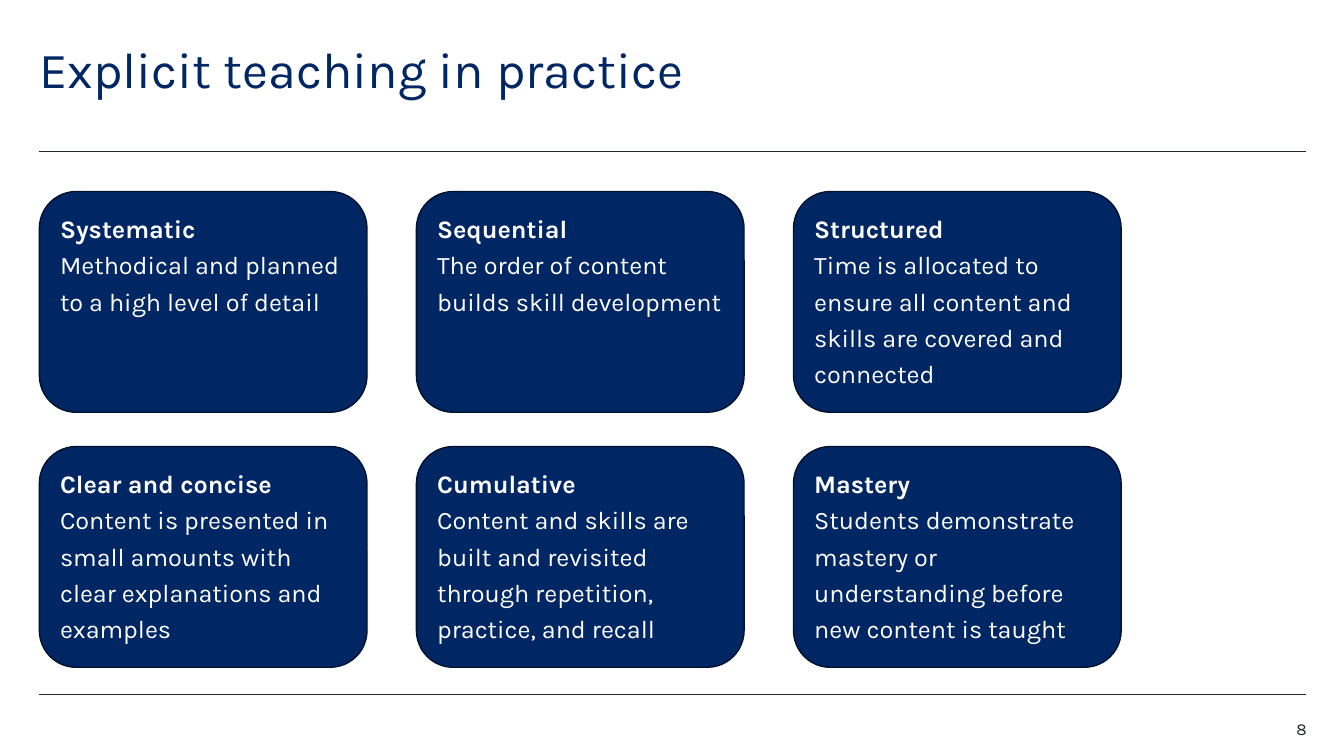
import pptx
import pptx.util
import pptx.dml.color
import pptx.enum.shapes
import pptx.enum.text
from lxml import etree
from pptx.util import Inches

NAVY = pptx.dml.color.RGBColor(0x00, 0x26, 0x64)
DARK_NAVY = pptx.dml.color.RGBColor(0x00, 0x11, 0x2C)
CHARCOAL = pptx.dml.color.RGBColor(0x22, 0x27, 0x2B)
WHITE = pptx.dml.color.RGBColor(0xFF, 0xFF, 0xFF)

MARGIN = 0.39
RULE_END = 12.95
CARD_TOP = 1.9
CARD_WIDTH, CARD_HEIGHT = 3.25, 2.19
COLUMN_STEP, ROW_STEP = 3.74, 2.53
COLUMNS = 3

PRINCIPLES = [
    ("Systematic", "Methodical and planned to a high level of detail"),
    ("Sequential", "The order of content builds skill development"),
    ("Structured", "Time is allocated to ensure all content and skills are covered and connected"),
    ("Clear and concise", "Content is presented in small amounts with clear explanations and examples"),
    ("Cumulative", "Content and skills are built and revisited through repetition, practice, and recall"),
    ("Mastery", "Students demonstrate mastery or understanding before new content is taught"),
]


class SlideBuilder:
    font_name = "Karla"

    def __init__(self, slide):
        self.slide = slide

    def style(self, paragraph, size, color, bold=False):
        paragraph.font.name = self.font_name
        paragraph.font.size = pptx.util.Pt(size)
        paragraph.font.color.rgb = color
        paragraph.font.bold = bold

    def rule(self, y):
        rule = self.slide.shapes.add_connector(
            pptx.enum.shapes.MSO_CONNECTOR.STRAIGHT,
            Inches(MARGIN), Inches(y), Inches(RULE_END), Inches(y))
        rule.line.color.rgb = CHARCOAL
        rule.line.width = pptx.util.Pt(0.5)
        etree.SubElement(rule._element.spPr, pptx.oxml.ns.qn("a:effectLst"))

    def text(self, content, left, top, width, height, size, color,
             align=pptx.enum.text.PP_ALIGN.LEFT,
             anchor=pptx.enum.text.MSO_ANCHOR.TOP, line_spacing=1.0):
        box = self.slide.shapes.add_textbox(
            Inches(left), Inches(top), Inches(width), Inches(height))
        frame = box.text_frame
        frame.word_wrap = True
        frame.margin_left = frame.margin_right = 0
        frame.margin_top = frame.margin_bottom = 0
        frame.vertical_anchor = anchor
        paragraph = frame.paragraphs[0]
        paragraph.text = content
        paragraph.alignment = align
        paragraph.line_spacing = line_spacing
        self.style(paragraph, size, color)

    def card(self, heading, description, left, top):
        card = self.slide.shapes.add_shape(
            pptx.enum.shapes.MSO_SHAPE.ROUNDED_RECTANGLE,
            Inches(left), Inches(top), Inches(CARD_WIDTH), Inches(CARD_HEIGHT))
        card.shadow.inherit = False
        card.fill.solid()
        card.fill.fore_color.rgb = NAVY
        card.line.color.rgb = DARK_NAVY
        card.line.width = pptx.util.Pt(1)
        frame = card.text_frame
        frame.word_wrap = True
        frame.vertical_anchor = pptx.enum.text.MSO_ANCHOR.TOP
        frame.text = f"{heading}\n{description}"
        for paragraph, bold in zip(frame.paragraphs, (True, False)):
            paragraph.alignment = pptx.enum.text.PP_ALIGN.LEFT
            paragraph.line_spacing = 1.2
            self.style(paragraph, 18, WHITE, bold)


def main():
    presentation = pptx.Presentation()
    presentation.slide_width = Inches(13.33)
    presentation.slide_height = Inches(7.5)
    builder = SlideBuilder(presentation.slides.add_slide(presentation.slide_layouts[6]))

    for y in (1.5, 6.89):
        builder.rule(y)
    builder.text("Explicit teaching in practice", MARGIN, 0.39, 11.02, 0.6, 36, NAVY,
                 anchor=pptx.enum.text.MSO_ANCHOR.BOTTOM, line_spacing=0.9)
    for index, (heading, description) in enumerate(PRINCIPLES):
        row, column = divmod(index, COLUMNS)
        builder.card(heading, description,
                     MARGIN + column * COLUMN_STEP, CARD_TOP + row * ROW_STEP)
    builder.text("8", 12.17, 7.13, 0.79, 0.2, 12, CHARCOAL,
                 align=pptx.enum.text.PP_ALIGN.RIGHT)

    presentation.save("out.pptx")


if __name__ == "__main__":
    main()
